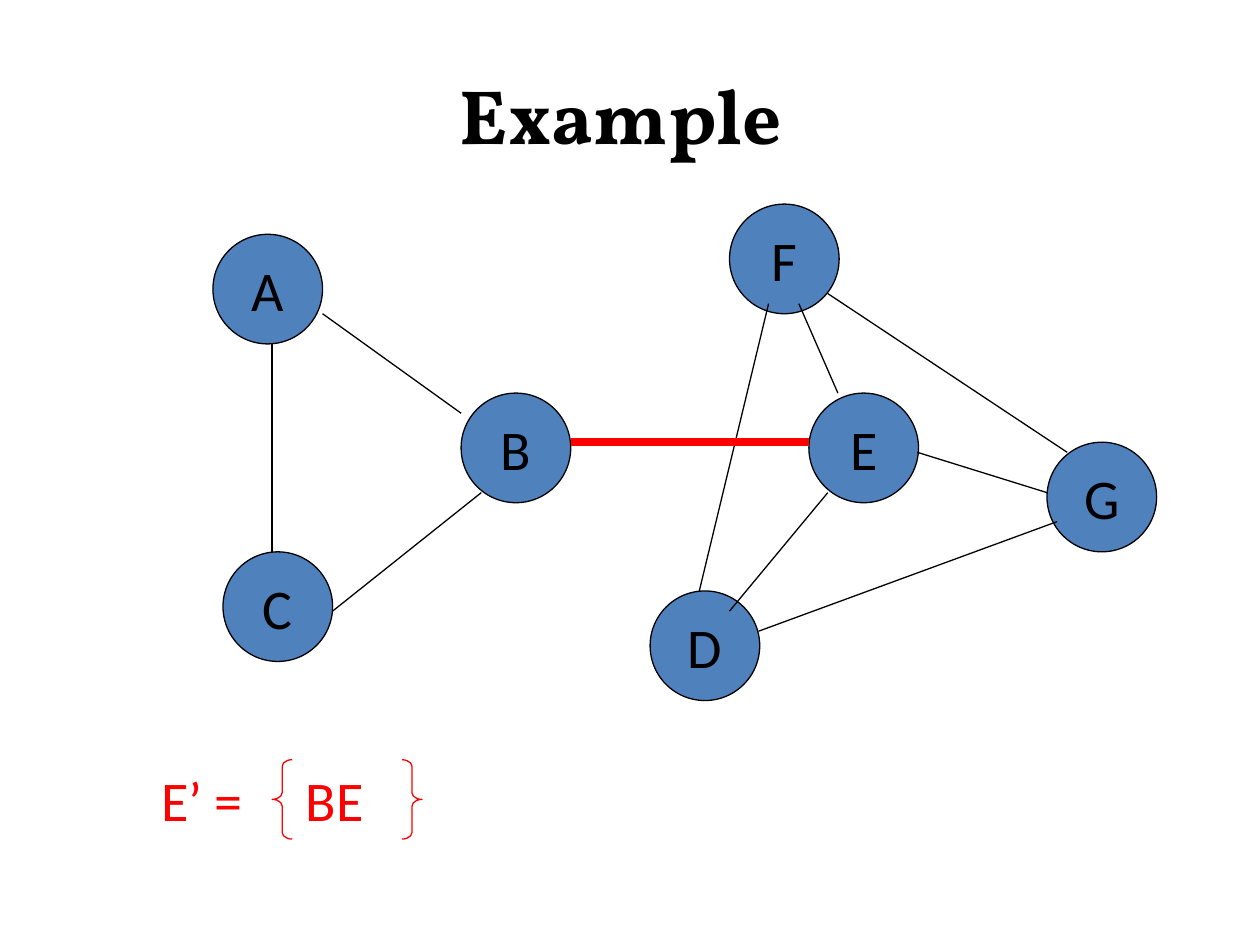
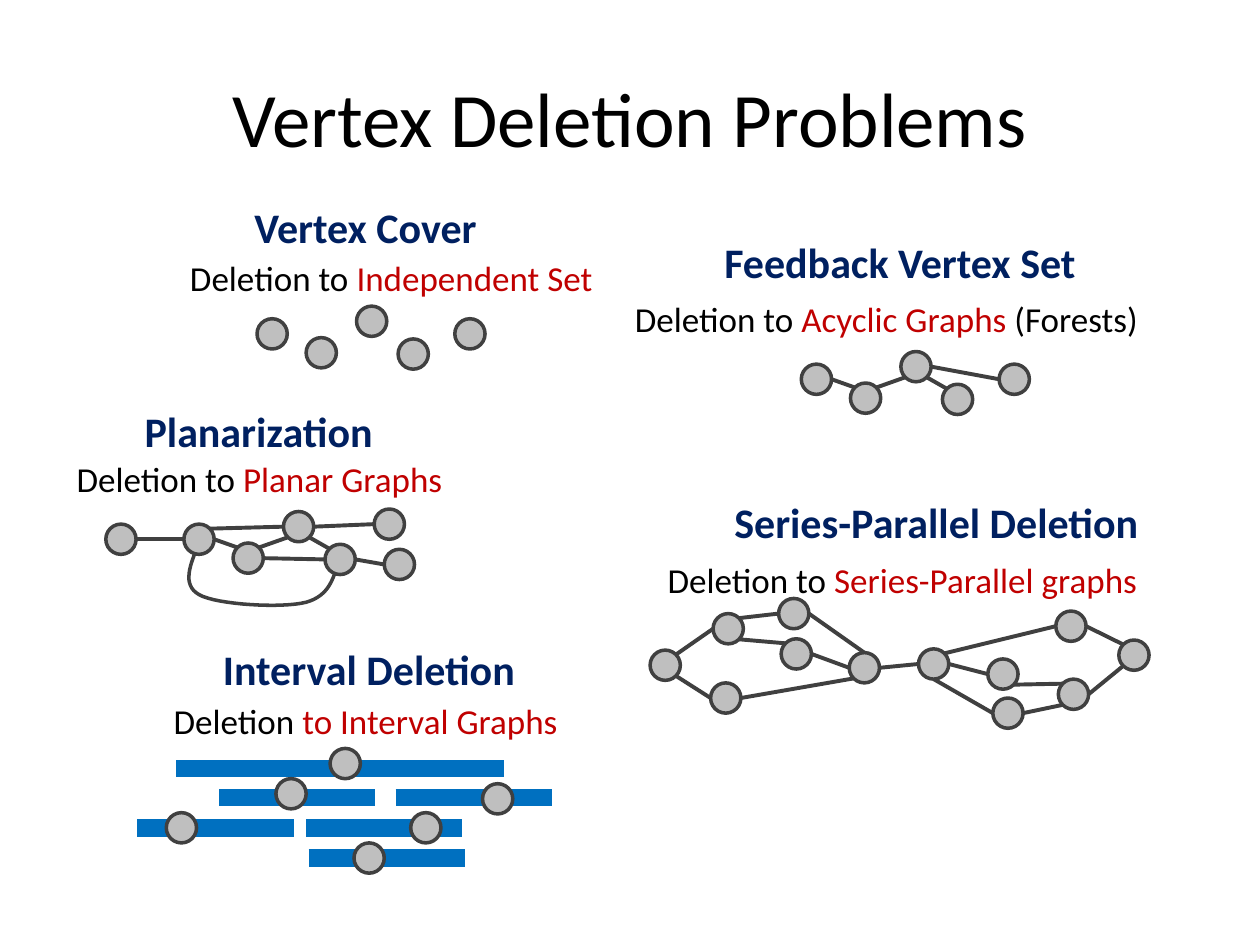
import pptx
import pptx.dml.color
import pptx.enum.shapes
import pptx.enum.text
import pptx.oxml.ns
import pptx.util
from lxml import etree

SHAPE = pptx.enum.shapes.MSO_SHAPE
ALIGN = pptx.enum.text.PP_ALIGN
ANCHOR = pptx.enum.text.MSO_ANCHOR
GROW = pptx.enum.text.MSO_AUTO_SIZE.SHAPE_TO_FIT_TEXT
qn = pptx.oxml.ns.qn

WIDE, HIGH = pptx.util.Inches(10), pptx.util.Inches(7.5)
CELL = WIDE / 100  # the grid has 100 columns and 75 rows

BLACK, RED, BLUE = "000000", "FF0000", "4F81BD"
NAVY, CRIMSON, BAR = "002060", "C00000", "0070C0"
GRAY, DARK = "BFBFBF", "404040"
BODY, SERIF = "Calibri", "Vollkorn"

BIG, SMALL = 8.7, 2.4  # circle sizes in cells
NEAR, FAR = 0.15, 0.85  # where a diagonal meets a circle, as shares of its box
SITES = {"n": (0.5, 0), "s": (0.5, 1), "w": (0, 0.5), "e": (1, 0.5),
         "nw": (NEAR, NEAR), "ne": (FAR, NEAR),
         "sw": (NEAR, FAR), "se": (FAR, FAR)}

LETTERS = {"A": (16.9, 18.6), "C": (17.7, 43.8), "B": (36.6, 31.2),
           "D": (51.6, 46.9), "G": (83.1, 35.1), "E": (64.2, 31.2),
           "F": (57.9, 16.2)}
THIN = [((25.6, 24.9), (36.6, 32.8)), ((26.4, 48.5), (38.2, 39.1)),
        ((21.6, 43.8), (21.6, 27.3)), ((55.5, 46.9), (61, 24.1)),
        ((60.2, 50.1), (83.9, 41.4)), ((84.7, 35.9), (65.7, 23.3)),
        ((66.5, 31.2), (63.4, 24.1)), ((72.8, 35.9), (83.1, 39.1)),
        ((65.7, 39.1), (57.9, 48.5))]

# heading, its box; then the line below, its box and its runs
TOPICS = [
    ("Vertex Cover", (19.2, 15.5, 19.9), (14.1, 19.9, 34.3),
     [("Deletion to ", BLACK), ("Independent Set", CRIMSON)]),
    ("Feedback Vertex Set", (56.5, 18.3, 30.2), (49.4, 23.1, 42.4),
     [("Deletion to ", BLACK), ("Acyclic Graphs ", CRIMSON),
      ("(Forests)", BLACK)]),
    ("Planarization", (10.5, 31.7, 20.3), (5.1, 35.8, 31.4),
     [("Deletion to ", BLACK), ("Planar Graphs", CRIMSON)]),
    ("Series-Parallel Deletion", (57.3, 38.9, 34.4), (52, 43.8, 39.7),
     [("Deletion to ", BLACK), ("Series-Parallel graphs", CRIMSON)]),
    ("Interval Deletion", (16.7, 50.6, 25.5), (12.8, 55, 32.8),
     [("Deletion ", BLACK), ("to Interval Graphs", CRIMSON)]),
]

FAN = [(0, 0), (3.9, 1.5), (7.9, -1), (11.2, 1.6), (15.7, 0)]
FOREST = "0e-1nw 2sw-1ne 2se-3nw 2e-4w"
PLANAR = FOREST + " 2w-0ne 3w-1e 5e-0w 6w-3e"
SERIES = [(56.6, 48.7), (61.8, 47.5), (51.6, 51.6), (56.4, 54.2),
          (62, 50.7), (67.4, 51.8), (84, 53.9), (78.8, 55.4),
          (88.8, 50.8), (83.8, 48.5), (78.4, 52.3), (72.9, 51.5)]
LINKS = ("2ne-0w 0ne-1w 0se-4nw 2se-3w 3e-5sw 1e-5n 4e-5w "
         "8sw-6e 6sw-7e 6nw-10se 8nw-9e 9w-11ne 7w-11s 10w-11e 5e-11w")
LOOP = [[(15.8, 43.1), (15.1, 44.8), (14.4, 46.4), (15.8, 47.2)],
        [(15.8, 47.2), (17.2, 48), (22.4, 48.3), (24.3, 47.8)],
        [(24.3, 47.8), (26.1, 47.3), (26.5, 45.9), (26.9, 44.4)]]

BARS = [(14, 61, 26), (17.4, 63.3, 12.4), (10.9, 65.7, 12.4),
        (24.5, 68.1, 12.4), (24.3, 65.7, 12.4), (31.4, 63.3, 12.4)]
BEADS = [(26.2, 59.4), (21.9, 61.8), (13.2, 64.5),
         (28.1, 66.9), (32.6, 64.5), (38.3, 62.2)]


def cells(*counts):
    return [round(n * CELL) for n in counts]


def tint(code):
    return pptx.dml.color.RGBColor.from_string(code)


def write(frame, runs, size=20, font=BODY, bold=False, align=ALIGN.LEFT,
          anchor=ANCHOR.TOP, wrap=False, tab=None):
    """Fill a text frame with one paragraph of (text, colour) runs."""
    frame.word_wrap = wrap
    frame.vertical_anchor = anchor
    line = frame.paragraphs[0]
    line.alignment = align
    if tab:
        stops = etree.SubElement(line._p.get_or_add_pPr(), qn("a:tabLst"))
        etree.SubElement(stops, qn("a:tab"), pos=str(cells(tab)[0]), algn="l")
    for text, code in runs:
        run = line.add_run()
        run.text = text
        run.font.size = pptx.util.Pt(size)
        run.font.name = font
        run.font.bold = bold
        run.font.color.rgb = tint(code)


def label(slide, box, runs, **style):
    """Add a text box that grows with its text."""
    frame = slide.shapes.add_textbox(*cells(*box)).text_frame
    write(frame, runs, **style)
    frame.auto_size = GROW


def title(slide, left, top, text, **style):
    box = slide.shapes.add_textbox(*cells(left, top, 90, 12.5))
    write(box.text_frame, [(text, BLACK)], size=44, align=ALIGN.CENTER,
          anchor=ANCHOR.MIDDLE, wrap=True, **style)


def paint(shape, fill, line, width):
    shape.shadow.inherit = False
    if fill:
        shape.fill.solid()
        shape.fill.fore_color.rgb = tint(fill)
    else:
        shape.fill.background()
    shape.line.color.rgb = tint(line)
    shape.line.width = pptx.util.Pt(width)


def disc(slide, spot, size=SMALL, fill=GRAY, line=DARK, width=2):
    shape = slide.shapes.add_shape(SHAPE.OVAL, *cells(*spot, size, size))
    paint(shape, fill, line, width)
    return shape


def stroke(slide, start, end, code=BLACK, width=0.75):
    line = slide.shapes.add_connector(
        pptx.enum.shapes.MSO_CONNECTOR.STRAIGHT, *cells(*start, *end))
    line.line.color.rgb = tint(code)
    line.line.width = pptx.util.Pt(width)
    etree.SubElement(line._element.spPr, qn("a:effectLst"))


def brace(slide, kind, left):
    shape = slide.shapes.add_shape(kind, *cells(left, 60.3, 1.6, 6.3))
    shape.adjustments[0] = 0.33
    paint(shape, None, RED, 0.75)


def site(spots, end):
    """Turn an end such as '3ne' into the point north-east on circle 3."""
    side = end.lstrip("0123456789")
    left, top = spots[int(end[:-len(side)])]
    right, down = SITES[side]
    return left + SMALL * right, top + SMALL * down


def graph(slide, spots, links=""):
    for spot in spots:
        disc(slide, spot)
    for link in links.split():
        start, end = link.split("-")
        stroke(slide, site(spots, start), site(spots, end), DARK, 2.25)


def shift(spots, left, top):
    return [(left + x, top + y) for x, y in spots]


def bend(curve, t):
    """Give the point at share t of a cubic curve."""
    parts = ((1 - t) ** 3, 3 * t * (1 - t) ** 2, 3 * t * t * (1 - t), t ** 3)
    return tuple(sum(p * spot[axis] for p, spot in zip(parts, curve))
                 for axis in (0, 1))


def loop(slide, curves, steps=16):
    dots = [cells(*bend(curve, n / steps))
            for curve in curves for n in range(1, steps + 1)]
    pen = slide.shapes.build_freeform(*cells(*curves[0][0]))
    pen.add_line_segments(dots, close=False)
    paint(pen.convert_to_shape(), None, DARK, 2)


def cut_slide(slide):
    title(slide, 4.3, 2.8, "Example", font=SERIF, bold=True)
    for name, spot in LETTERS.items():
        shape = disc(slide, spot, BIG, BLUE, BLACK, 0.75)
        write(shape.text_frame, [(name, BLACK)], size=32,
              align=ALIGN.CENTER, anchor=ANCHOR.MIDDLE)
    for start, end in THIN:
        stroke(slide, start, end)
    stroke(slide, (45.3, 35.1), (64.2, 35.1), RED, 4.5)
    label(slide, (11.8, 60.3, 18.3, 6.4), [("E’ =\tBE", RED)],
          size=32, wrap=True, tab=11.5)
    brace(slide, SHAPE.LEFT_BRACE, 21.6)
    brace(slide, SHAPE.RIGHT_BRACE, 31.9)


def topic_slide(slide):
    loop(slide, LOOP)
    title(slide, 5, 3, "Vertex Deletion Problems")
    for head, high, low, runs in TOPICS:
        label(slide, (*high, 5), [(head, NAVY)], size=24, bold=True)
        label(slide, (*low, 4.4), runs)
    graph(slide, shift(FAN, 20.4, 25.3))
    graph(slide, shift(FAN, 63.6, 28.9), FOREST)
    ends = [(29.7, 40.4), (8.4, 41.6), (30.5, 43.6)]
    graph(slide, shift(FAN[:4], 14.6, 41.6) + ends, PLANAR)
    graph(slide, SERIES, LINKS)
    for left, top, span in BARS:
        stroke(slide, (left, top), (left + span, top), BAR, 10)
    graph(slide, BEADS)


def main():
    deck = pptx.Presentation()
    deck.slide_width, deck.slide_height = WIDE, HIGH
    for build in (cut_slide, topic_slide):
        build(deck.slides.add_slide(deck.slide_layouts[6]))
    deck.save("out.pptx")


if __name__ == "__main__":
    main()
